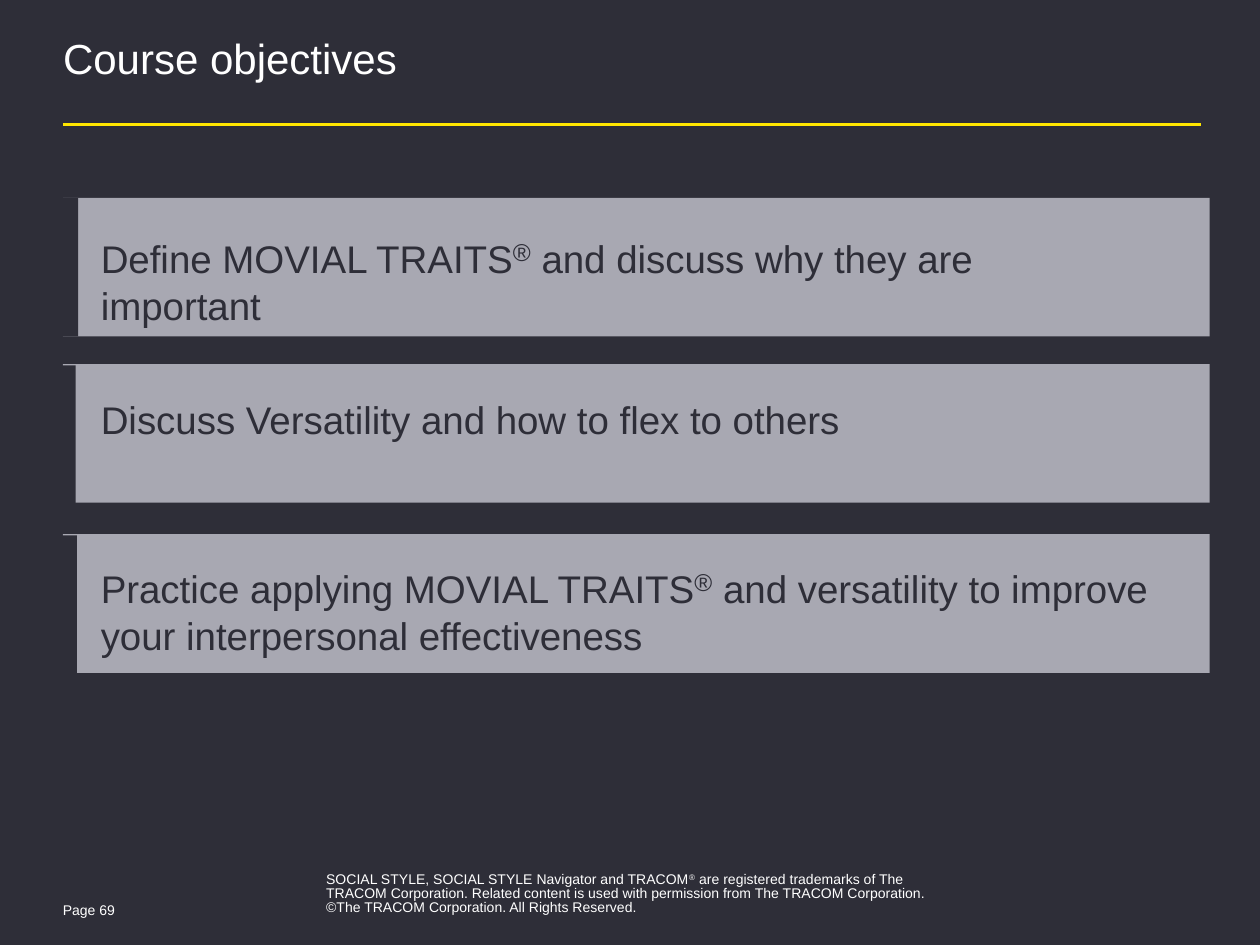
from lxml import etree
from pptx import Presentation
from pptx import util as u
from pptx.dml.color import RGBColor
from pptx.enum import shapes, text
from pptx.oxml.ns import qn

DARK = RGBColor(0x2E, 0x2E, 0x38)
WHITE = RGBColor(0xFF, 0xFF, 0xFF)
YELLOW = RGBColor(0xFF, 0xE6, 0x00)
GREY = RGBColor(0xC4, 0xC4, 0xCD)
FONT = "Arial"
COLUMNS, ROWS = 100, 75
MARK = "®"


class SlideBuilder:
    def __init__(self, presentation):
        self.column = presentation.slide_width / COLUMNS
        self.row = presentation.slide_height / ROWS
        self.slide = presentation.slides.add_slide(presentation.slide_layouts[5])
        fill = self.slide.background.fill
        fill.solid()
        fill.fore_color.rgb = DARK

    def box(self, left, top, width, height):
        return (u.Emu(round(left * self.column)), u.Emu(round(top * self.row)),
                u.Emu(round(width * self.column)), u.Emu(round(height * self.row)))

    def style(self, run, size, color):
        run.font.name = FONT
        run.font.size = u.Pt(size)
        run.font.color.rgb = color

    def title(self, wording, *place):
        shape = self.slide.shapes.title
        shape.left, shape.top, shape.width, shape.height = self.box(*place)
        frame = shape.text_frame
        frame.text = wording
        self.setup(frame, 0)
        paragraph = frame.paragraphs[0]
        paragraph.alignment = text.PP_ALIGN.LEFT
        paragraph.line_spacing = 0.85
        self.style(paragraph.runs[0], 24, WHITE)

    def setup(self, frame, inset):
        frame.word_wrap = True
        frame.auto_size = text.MSO_AUTO_SIZE.NONE
        frame.vertical_anchor = text.MSO_ANCHOR.TOP
        frame.margin_left = frame.margin_right = u.Inches(inset)
        frame.margin_top = frame.margin_bottom = u.Inches(inset / 2)

    def label(self, wording, place, size, color, mark_size=None, inset=0, spacing=None):
        frame = self.slide.shapes.add_textbox(*self.box(*place)).text_frame
        self.setup(frame, inset)
        paragraph = frame.paragraphs[0]
        paragraph.space_after = u.Pt(6)
        paragraph.line_spacing = spacing
        before, mark, after = wording.partition(MARK)
        paragraph.text = before
        if mark:
            paragraph.add_run().text = mark
            lines = after.split("\n")
            paragraph.add_run().text = lines[0]
            for line in lines[1:]:
                paragraph.add_line_break()
                paragraph.add_run().text = line
        for run in paragraph.runs:
            raised = run.text == MARK
            self.style(run, mark_size if raised else size, color)
            if raised:
                run.font._element.set("baseline", "30000")

    def rectangle(self, place, color, opacity=None):
        shape = self.slide.shapes.add_shape(shapes.MSO_SHAPE.RECTANGLE, *self.box(*place))
        shape.shadow.inherit = False
        shape.fill.solid()
        shape.fill.fore_color.rgb = color
        shape.line.fill.background()
        if opacity:
            tint = shape.fill._xPr.find(qn("a:solidFill"))[0]
            etree.SubElement(tint, qn("a:alpha")).set("val", str(opacity * 1000))

    def rule(self, left, right, top, color, width):
        x, y, length, _ = self.box(left, top, right - left, 0)
        line = self.slide.shapes.add_connector(shapes.MSO_CONNECTOR.STRAIGHT, x, y, x + length, y)
        line.line.color.rgb = color
        line.line.width = u.Pt(width)
        etree.SubElement(line._element.spPr, qn("a:effectLst"))


OBJECTIVES = [
    ("Define MOVIAL TRAITS® and discuss why they are important",
     15.7, (4.4, 15.7), (18.4, 82.7, 4.5)),
    ("Discuss Versatility and how to flex to others",
     28.9, (4.2, 29), (31.4, 81.4, 4)),
    ("Practice applying MOVIAL TRAITS® and versatility to improve "
     "your interpersonal effectiveness",
     42.4, (4.3, 42.5), (44.6, 87.7, 10.5)),
]
NOTICE = ("SOCIAL STYLE, SOCIAL STYLE Navigator and TRACOM® are registered trademarks of The "
          "TRACOM Corporation. Related content is used with permission from The TRACOM "
          "Corporation. \n©The TRACOM Corporation. All Rights Reserved.")


def main():
    presentation = Presentation()
    presentation.slide_width, presentation.slide_height = u.Inches(10), u.Inches(7.5)
    builder = SlideBuilder(presentation)
    builder.label("Page 69", (4, 71.1, 7.3, 2), 8, WHITE, inset=0.1)
    builder.rule(5, 95.3, 9.9, YELLOW, 1.5)
    builder.title("Course objectives", 5, 3.2, 90, 6.5)
    for wording, bar_top, (edge_left, edge_top), (top, width, height) in OBJECTIVES:
        builder.rectangle((5, bar_top, 91, 11), GREY, 82)
        builder.rectangle((edge_left, edge_top, 1.8, 11), DARK)
        builder.label(wording, (8, top, width, height), 22, DARK, mark_size=24)
    builder.label(NOTICE, (24.9, 68.8, 51.3, 4.4), 8, WHITE,
                  mark_size=8, inset=0.1, spacing=0.85)
    presentation.save("out.pptx")


if __name__ == "__main__":
    main()
